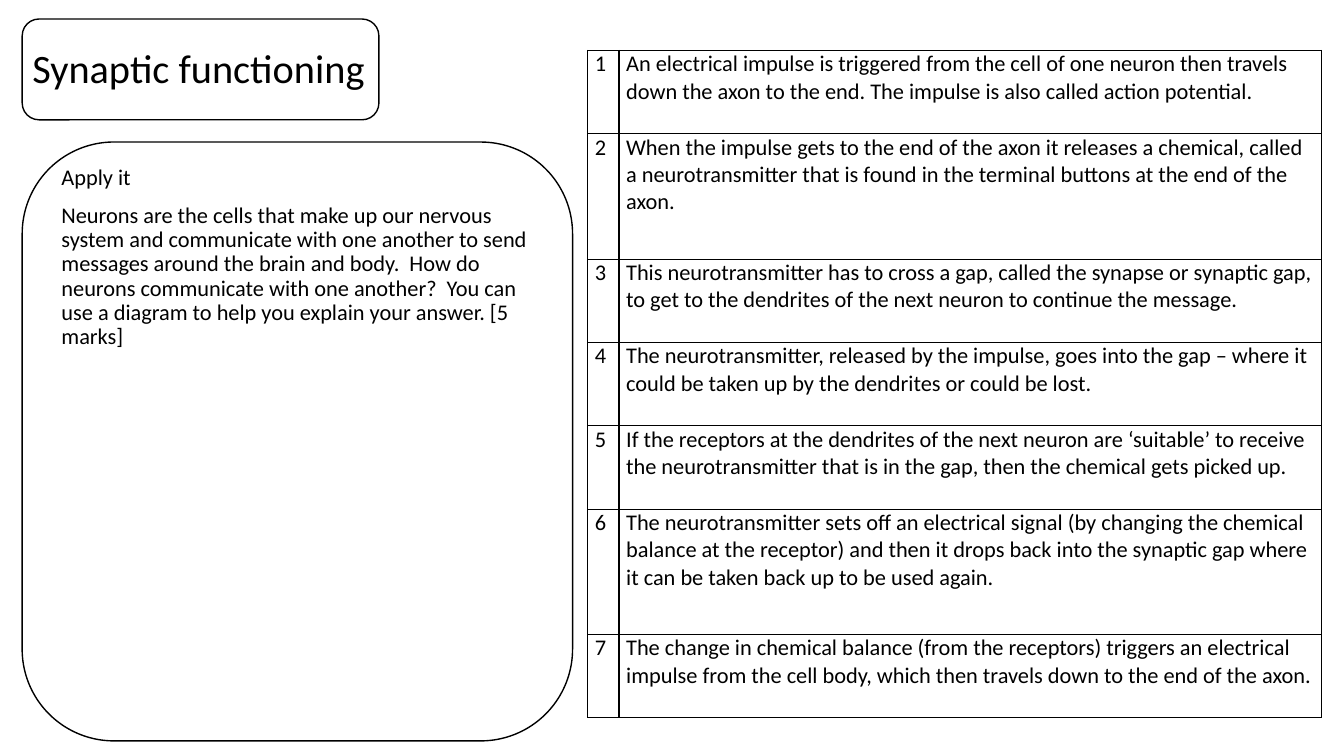
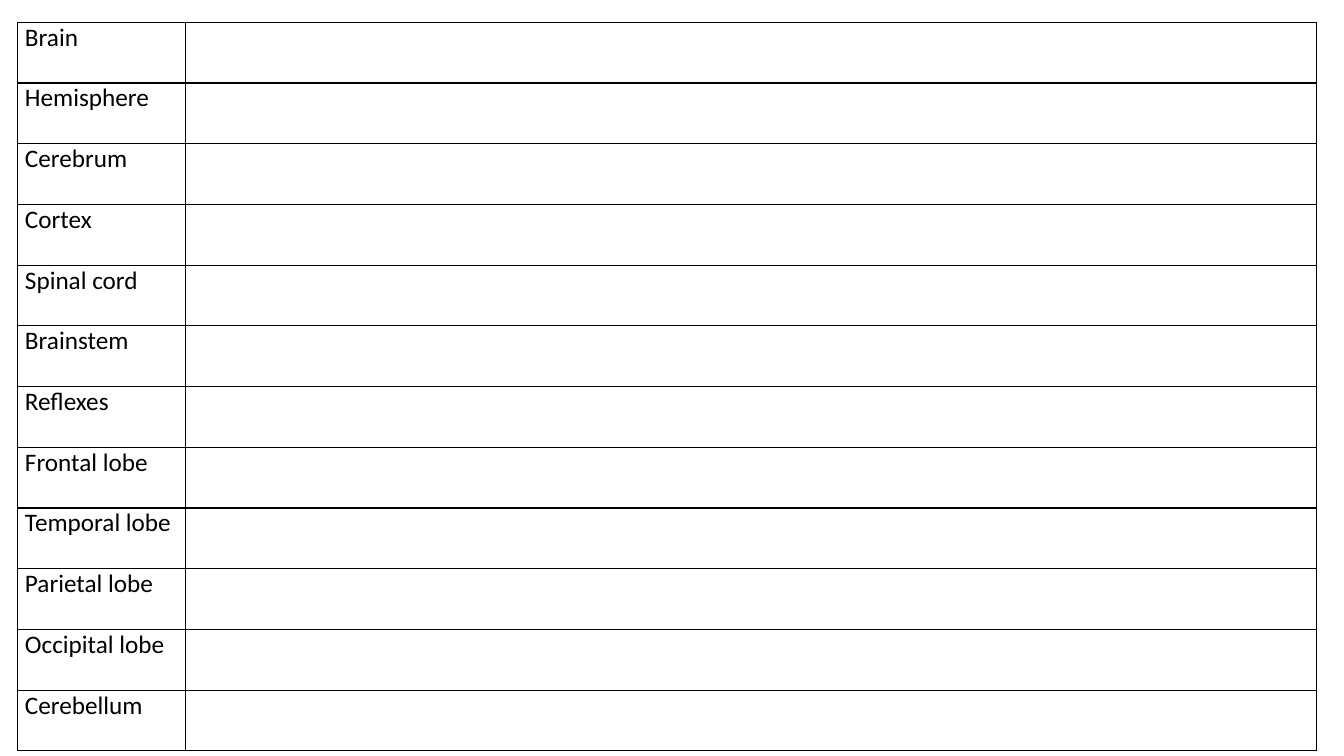
from lxml import etree
from pptx import Presentation
from pptx.dml.color import RGBColor
from pptx.enum.shapes import MSO_SHAPE
from pptx.enum.text import MSO_ANCHOR, MSO_AUTO_SIZE, PP_ALIGN
from pptx.oxml.ns import qn
from pptx.util import Cm, Pt

ROUND = MSO_SHAPE.ROUNDED_RECTANGLE
TOP, BOTTOM = MSO_ANCHOR.TOP, MSO_ANCHOR.BOTTOM
LEFT = PP_ALIGN.LEFT
FIXED = MSO_AUTO_SIZE.NONE

FONT = "Calibri"
BLACK = "000000"
LINE = Pt(1)
TITLE_ONLY, BLANK = 5, 6

TITLE = "Synaptic functioning"
TASK = [
    "Apply it",
    "Neurons are the cells that make up our nervous system and communicate "
    "with one another to send messages around the brain and body.  How do "
    "neurons communicate with one another?  You can use a diagram to help "
    "you explain your answer. [5 marks]",
]
STEPS = [
    "An electrical impulse is triggered from the cell of one neuron then "
    "travels down the axon to the end. The impulse is also called action "
    "potential.",
    "When the impulse gets to the end of the axon it releases a chemical, "
    "called a neurotransmitter that is found in the terminal buttons at the "
    "end of the axon.",
    "This neurotransmitter has to cross a gap, called the synapse or synaptic "
    "gap, to get to the dendrites of the next neuron to continue the message.",
    "The neurotransmitter, released by the impulse, goes into the gap – where "
    "it could be taken up by the dendrites or could be lost.",
    "If the receptors at the dendrites of the next neuron are ‘suitable’ to "
    "receive the neurotransmitter that is in the gap, then the chemical gets "
    "picked up.",
    "The neurotransmitter sets off an electrical signal (by changing the "
    "chemical balance at the receptor) and then it drops back into the "
    "synaptic gap where it can be taken back up to be used again.",
    "The change in chemical balance (from the receptors) triggers an "
    "electrical impulse from the cell body, which then travels down to the "
    "end of the axon.",
]
SHORT, TALL = 2.1, 3.16
STEP_ROWS = [SHORT, TALL, SHORT, SHORT, SHORT, TALL, SHORT]
TERMS = [
    "Brain", "Hemisphere", "Cerebrum", "Cortex", "Spinal cord", "Brainstem",
    "Reflexes", "Frontal lobe", "Temporal lobe", "Parietal lobe",
    "Occipital lobe", "Cerebellum",
]
TERM_ROW = 1.53


def color(code):
    return RGBColor.from_string(code)


def write(frame, lines, size, space=1.0, before=0, anchor=TOP):
    frame.word_wrap = True
    frame.vertical_anchor = anchor
    for i, line in enumerate(lines):
        par = frame.add_paragraph() if i else frame.paragraphs[0]
        par.alignment = LEFT
        par.line_spacing = space
        par.space_before = Pt(before)
        run = par.add_run()
        run.text = line
        run.font.size = Pt(size)
        run.font.name = FONT
        run.font.color.rgb = color(BLACK)


def border(cell):
    props = cell._tc.get_or_add_tcPr()
    for i, side in enumerate(("lnL", "lnR", "lnT", "lnB")):
        line = etree.Element(qn("a:" + side), w=str(int(LINE)))
        fill = etree.SubElement(line, qn("a:solidFill"))
        etree.SubElement(fill, qn("a:srgbClr"), val=BLACK)
        props.insert(i, line)


def grid(slide, left, top, cols, heights, rows, size):
    """Add a plain ruled table; empty strings leave cells blank."""
    frame = slide.shapes.add_table(
        len(rows), len(cols), Cm(left), Cm(top),
        Cm(sum(cols)), Cm(sum(heights)))
    table = frame.table
    table.first_row = table.horz_banding = False
    for col, width in zip(table.columns, cols):
        col.width = Cm(width)
    for row, height, texts in zip(table.rows, heights, rows):
        row.height = Cm(height)
        for cell, text in zip(row.cells, texts):
            cell.margin_left = cell.margin_right = Cm(0.18)
            cell.margin_top = cell.margin_bottom = 0
            cell.fill.background()
            border(cell)
            if text:
                write(cell.text_frame, [text], size)


def outline(slide, *box):
    shape = slide.shapes.add_shape(ROUND, *map(Cm, box))
    shape.shadow.inherit = False
    shape.fill.background()
    shape.line.color.rgb = color(BLACK)
    shape.line.width = LINE


def synapse(deck):
    slide = deck.slides.add_slide(deck.slide_layouts[TITLE_ONLY])
    title = slide.shapes.title
    title.left, title.top = Cm(0.56), Cm(1.09)
    title.width, title.height = Cm(10.92), Cm(1.35)
    title.text_frame.auto_size = FIXED
    write(title.text_frame, [TITLE], 28.8, space=0.9, anchor=BOTTOM)

    rows = [(str(i), step) for i, step in enumerate(STEPS, 1)]
    grid(slide, 14.81, 1.27, [0.79, 17.7], STEP_ROWS, rows, 16)

    task = slide.shapes.add_textbox(Cm(1.3), Cm(4.06), Cm(12.42), Cm(12.4))
    write(task.text_frame, TASK, 16, space=0.9, before=10)

    outline(slide, 0.56, 0.48, 8.99, 2.54)
    outline(slide, 0.56, 3.58, 13.87, 15.09)


def glossary(deck):
    slide = deck.slides.add_slide(deck.slide_layouts[BLANK])
    rows = [(term, "") for term in TERMS]
    grid(slide, 0.45, 0.56, [4.22, 28.5], [TERM_ROW] * len(TERMS), rows, 18)


def main():
    deck = Presentation()
    deck.slide_width, deck.slide_height = Cm(33.87), Cm(19.05)
    synapse(deck)
    glossary(deck)
    deck.save("out.pptx")


if __name__ == "__main__":
    main()
